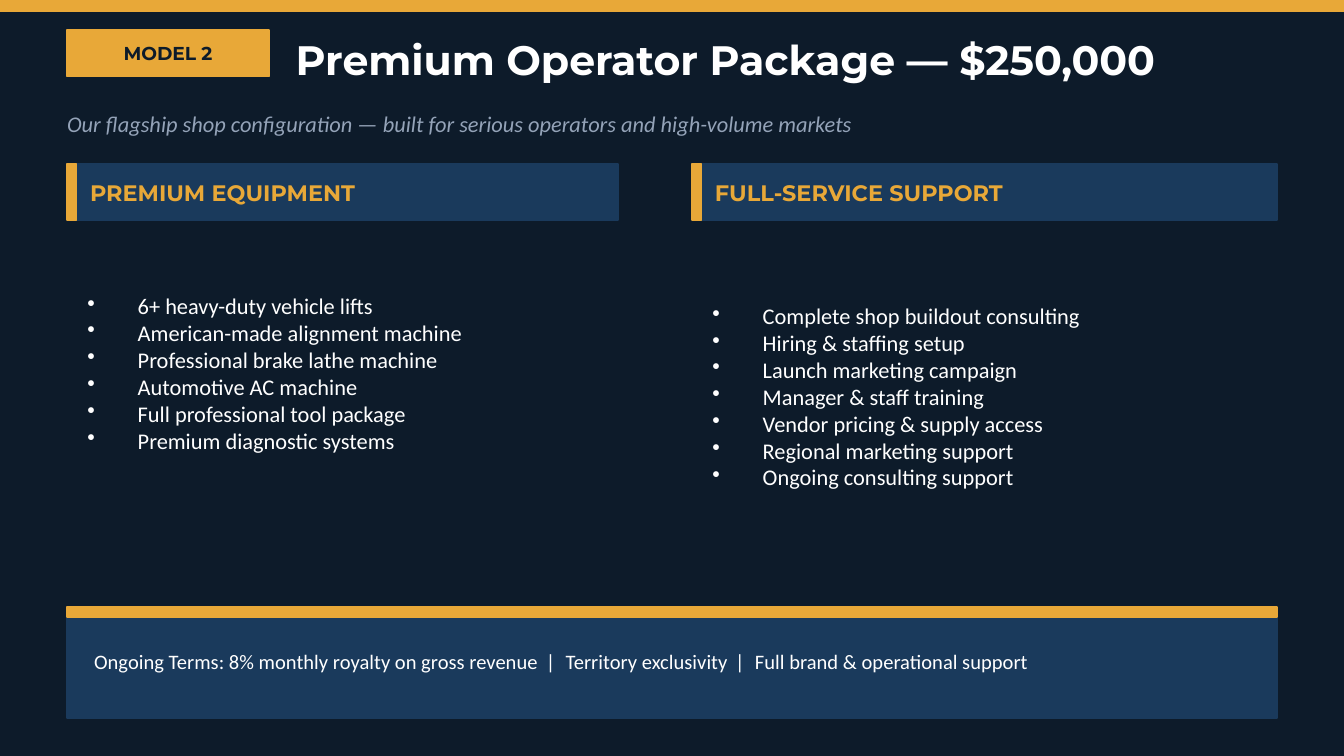
"""Build the Premium Operator Package slide."""
from dataclasses import dataclass

from lxml import etree
from pptx import Presentation
from pptx import util as u
from pptx.dml.color import RGBColor
from pptx.enum import shapes, text
from pptx.oxml import ns

MODEL = "MODEL 2"
HEADLINE = "Premium Operator Package — $250,000"
TAGLINE = "Our flagship shop configuration — built for serious operators and high-volume markets"
COLUMNS = [
    {"heading": "PREMIUM EQUIPMENT", "left": 100, "width": 820, "list_height": 430,
     "items": ["6+ heavy-duty vehicle lifts", "American-made alignment machine",
               "Professional brake lathe machine", "Automotive AC machine",
               "Full professional tool package", "Premium diagnostic systems"]},
    {"heading": "FULL-SERVICE SUPPORT", "left": 1030, "width": 870, "list_height": 500,
     "items": ["Complete shop buildout consulting", "Hiring & staffing setup",
               "Launch marketing campaign", "Manager & staff training",
               "Vendor pricing & supply access", "Regional marketing support",
               "Ongoing consulting support"]},
]
TERMS = ["Ongoing Terms: 8% monthly royalty on gross revenue", "Territory exclusivity",
         "Full brand & operational support"]


@dataclass(frozen=True)
class Theme:
    navy: str = "0D1B2A"
    panel: str = "1A3A5C"
    gold: str = "E8A838"
    white: str = "FFFFFF"
    muted: str = "94A3B8"
    heading_font: str = "Montserrat"
    body_font: str = "Calibri"
    title_size: int = 22
    text_size: int = 12
    terms_size: int = 11
    badge_size: int = 10


THEME = Theme()
PX = 4572
WIDTH, HEIGHT = 2000, 1125
MARGIN = 100
CONTENT = WIDTH - 2 * MARGIN
ACCENT = 14
HEADER_TOP, HEADER_HEIGHT = 244, 84
LIST_TOP, LIST_INDENT = 340, 75
TERMS_TOP = 904
SEPARATOR_SPACING = 150


def px(*lengths):
    return [u.Emu(length * PX) for length in lengths]


def add_bar(slide, box, color):
    bar = slide.shapes.add_shape(shapes.MSO_SHAPE.RECTANGLE, *px(*box))
    bar.shadow.inherit = False
    bar.fill.solid()
    bar.fill.fore_color.rgb = RGBColor.from_string(color)
    bar.line.color.rgb = RGBColor.from_string(color)
    bar.line.width = u.Pt(1)


def prepare_frame(holder):
    frame = holder.text_frame
    frame.word_wrap = True
    frame.auto_size = text.MSO_AUTO_SIZE.NONE
    frame.vertical_anchor = text.MSO_ANCHOR.MIDDLE
    frame.margin_left = frame.margin_top = frame.margin_right = frame.margin_bottom = 0
    return frame


def add_frame(slide, box):
    return prepare_frame(slide.shapes.add_textbox(*px(*box)))


def add_run(paragraph, words, size, color, font=THEME.body_font, bold=False, italic=False):
    run = paragraph.add_run()
    run.text = words
    run.font.name = font
    run.font.size = u.Pt(size)
    run.font.bold = bold
    run.font.italic = italic
    run.font.color.rgb = RGBColor.from_string(color)
    return run


def add_heading(frame, words, size, color, align=text.PP_ALIGN.LEFT):
    paragraph = frame.paragraphs[0]
    paragraph.alignment = align
    add_run(paragraph, words, size, color, THEME.heading_font, bold=True)


def add_bullets(frame, items):
    for index, item in enumerate(items):
        paragraph = frame.add_paragraph() if index else frame.paragraphs[0]
        properties = paragraph._p.get_or_add_pPr()
        properties.set("marL", str(LIST_INDENT * PX))
        properties.set("indent", str(-LIST_INDENT * PX))
        etree.SubElement(properties, ns.qn("a:buSzPct")).set("val", "100000")
        etree.SubElement(properties, ns.qn("a:buChar")).set("char", "•")
        add_run(paragraph, item, THEME.text_size, THEME.white)


def add_header(slide):
    add_bar(slide, (0, 0, WIDTH, 16), THEME.gold)
    badge = (MARGIN, 44, 300, 70)
    add_bar(slide, badge, THEME.gold)
    add_heading(add_frame(slide, badge), MODEL, THEME.badge_size, THEME.navy,
                text.PP_ALIGN.CENTER)
    title = slide.shapes.title
    title.left, title.top, title.width, title.height = px(440, 40, 1460, 96)
    add_heading(prepare_frame(title), HEADLINE, THEME.title_size, THEME.white)
    tagline = add_frame(slide, (MARGIN, 152, CONTENT, 64))
    add_run(tagline.paragraphs[0], TAGLINE, THEME.text_size, THEME.muted, italic=True)


def add_column(slide, column):
    left, width = column["left"], column["width"]
    add_bar(slide, (left, HEADER_TOP, width, HEADER_HEIGHT), THEME.panel)
    add_bar(slide, (left, HEADER_TOP, ACCENT, HEADER_HEIGHT), THEME.gold)
    heading = add_frame(slide, (left + 34, HEADER_TOP, width - 50, HEADER_HEIGHT))
    add_heading(heading, column["heading"], THEME.text_size, THEME.gold)
    bullets = add_frame(slide, (left + 30, LIST_TOP, width - 60, column["list_height"]))
    add_bullets(bullets, column["items"])


def add_terms(slide):
    add_bar(slide, (MARGIN, TERMS_TOP, CONTENT, 164), THEME.panel)
    add_bar(slide, (MARGIN, TERMS_TOP, CONTENT, ACCENT), THEME.gold)
    frame = add_frame(slide, (MARGIN + 40, TERMS_TOP + 20, CONTENT - 80, 120))
    paragraph = frame.paragraphs[0]
    for index, term in enumerate(TERMS):
        if index:
            separator = add_run(paragraph, " | ", THEME.terms_size, THEME.white)
            separator._r.get_or_add_rPr().set("spc", str(SEPARATOR_SPACING))
        add_run(paragraph, term, THEME.terms_size, THEME.white)


def main():
    deck = Presentation()
    deck.slide_width, deck.slide_height = px(WIDTH, HEIGHT)
    slide = deck.slides.add_slide(deck.slide_layouts[5])
    slide.background.fill.solid()
    slide.background.fill.fore_color.rgb = RGBColor.from_string(THEME.navy)
    add_header(slide)
    for column in COLUMNS:
        add_column(slide, column)
    add_terms(slide)
    deck.save("out.pptx")


if __name__ == "__main__":
    main()
